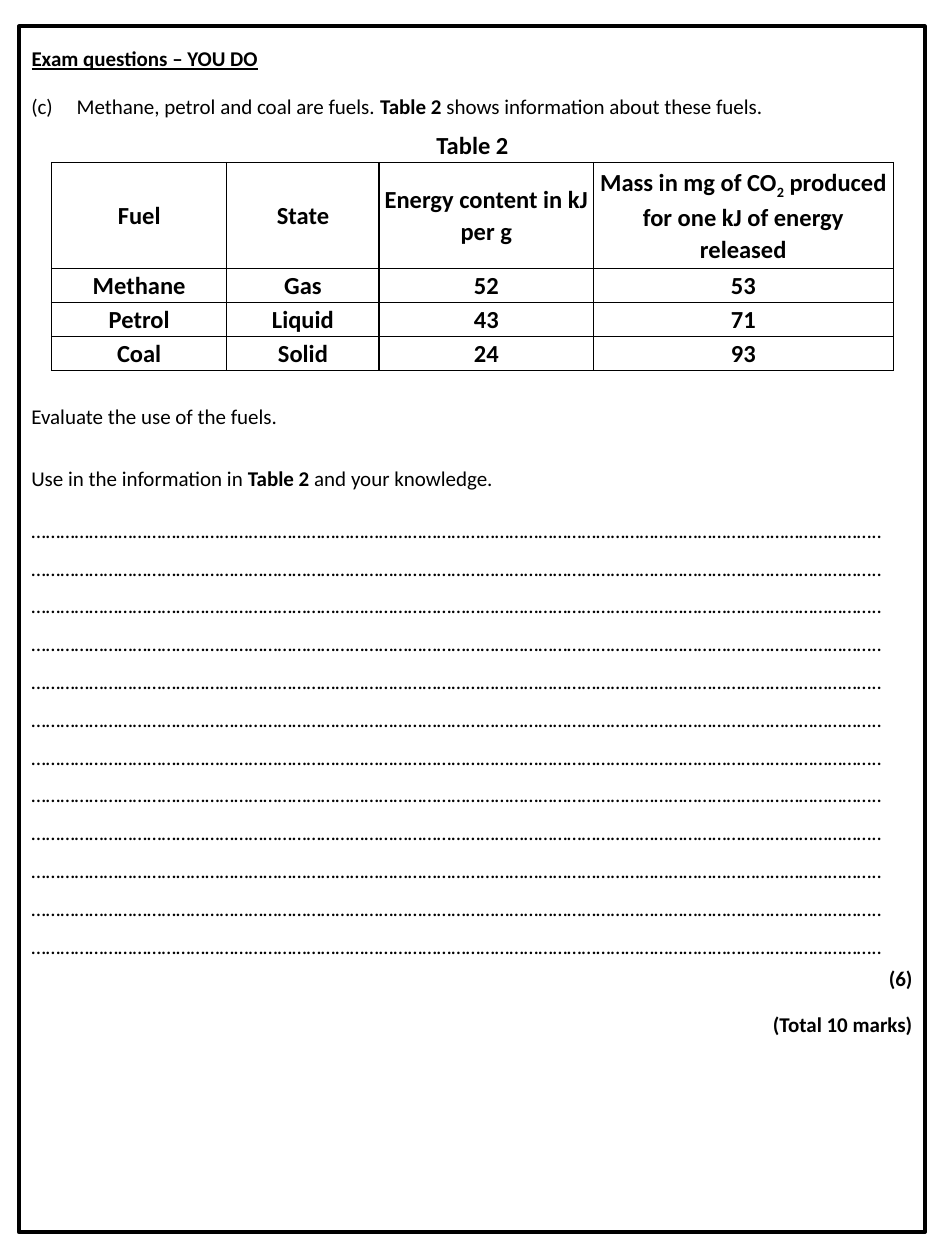
import pptx
import pptx.dml.color
import pptx.enum.shapes
import pptx.enum.text
import pptx.oxml
import pptx.oxml.ns
import pptx.util
from dataclasses import dataclass

Inches = pptx.util.Inches
Pt = pptx.util.Pt
Align = pptx.enum.text.PP_ALIGN
Anchor = pptx.enum.text.MSO_ANCHOR

BLACK = "000000"
FRAME = (0.15, 0.21, 7.19, 9.57)
TABLE = (0.41, 1.02, 6.68, 1.92)
COLUMN_WIDTHS = (1.39, 1.21, 1.7, 2.38)
ROW_HEIGHTS = (0.27, 0.84, 0.27, 0.27, 0.27)
ANSWER_LINES = 12
ANSWER_LINE = "…" * 58 + ".."


@dataclass(frozen=True)
class Span:
    text: str
    bold: bool = False
    subscript: bool = False


@dataclass(frozen=True)
class Line:
    spans: tuple[Span, ...]
    spacing: float = 1.07
    before: float = 12
    after: float = 8
    align: Align = Align.LEFT
    hanging: float = 0


QUESTION = (
    Line(
        (
            Span("(c)\tMethane, petrol and coal are fuels. "),
            Span("Table 2", bold=True),
            Span(" shows information about these fuels."),
        ),
        before=0,
        hanging=0.36,
    ),
    Line((Span("Evaluate the use of the fuels."),), before=153.7),
    Line(
        (
            Span("Use in the information in "),
            Span("Table 2", bold=True),
            Span(" and your knowledge."),
        )
    ),
    *[Line((Span(ANSWER_LINE),), spacing=1.5, before=0, after=0)] * ANSWER_LINES,
    *[
        Line((Span(marks, bold=True),), before=3, align=Align.RIGHT)
        for marks in ("(6)", "(Total 10 marks)")
    ],
)

CO2_HEADING = (
    Span("Mass in mg of CO", bold=True),
    Span("2", bold=True, subscript=True),
    Span(" produced for one kJ of energy released", bold=True),
)
TABLE_ROWS = (
    ("Table 2", "", "", ""),
    ("Fuel", "State", "Energy content in kJ per g", CO2_HEADING),
    ("Methane", "Gas", "52", "53"),
    ("Petrol", "Liquid", "43", "71"),
    ("Coal", "Solid", "24", "93"),
)


def color(value: str) -> pptx.dml.color.RGBColor:
    return pptx.dml.color.RGBColor.from_string(value)


def add_text(para, text: str, *, size: float = 12, bold: bool = False,
             underline: bool = False, subscript: bool = False) -> None:
    span = para.add_run()
    span.text = text
    span.font.name = "Calibri"
    span.font.size = Pt(size)
    span.font.bold = bold
    span.font.underline = underline
    span.font.color.rgb = color(BLACK)
    if subscript:
        span.font._element.set("baseline", "-25000")


def write_line(para, line: Line, size: float = 12) -> None:
    para.alignment = line.align
    para.line_spacing = line.spacing
    para.space_before = Pt(line.before)
    para.space_after = Pt(line.after)
    if line.hanging:
        properties = para._p.get_or_add_pPr()
        properties.set("marL", str(Inches(line.hanging)))
        properties.set("indent", str(-Inches(line.hanging)))
    for span in line.spans:
        add_text(para, span.text, size=size, bold=span.bold, subscript=span.subscript)


def set_borders(cell, visible: str) -> None:
    properties = cell._tc.get_or_add_tcPr()
    namespace = pptx.oxml.ns.nsdecls("a")
    for position, side in enumerate("LRTB"):
        fill = (
            f'<a:solidFill><a:srgbClr val="{BLACK}"/></a:solidFill>'
            if side in visible else "<a:noFill/>"
        )
        border = pptx.oxml.parse_xml(
            f'<a:ln{side} {namespace} w="{Pt(1)}">{fill}</a:ln{side}>'
        )
        properties.insert(position, border)


def add_heading(page) -> None:
    heading = page.shapes.title
    left, top, width, _ = FRAME
    heading.left, heading.top, heading.width, heading.height = map(
        Inches, (left, top, width, 0.4)
    )
    frame = heading.text_frame
    frame.word_wrap = True
    frame.auto_size = pptx.enum.text.MSO_AUTO_SIZE.NONE
    frame.vertical_anchor = Anchor.TOP
    para = frame.paragraphs[0]
    para.alignment = Align.LEFT
    para.line_spacing = 1.5
    add_text(para, "Exam questions – YOU DO", bold=True, underline=True)


def add_question(page) -> None:
    box = page.shapes.add_shape(
        pptx.enum.shapes.MSO_SHAPE.RECTANGLE, *map(Inches, FRAME)
    )
    box.shadow.inherit = False
    box.fill.background()
    box.line.color.rgb = color(BLACK)
    box.line.width = Pt(2.25)
    frame = box.text_frame
    frame.word_wrap = True
    frame.vertical_anchor = Anchor.TOP
    frame.margin_top = Inches(0.52)
    for index, line in enumerate(QUESTION):
        para = frame.add_paragraph() if index else frame.paragraphs[0]
        write_line(para, line)


def add_fuel_table(page) -> None:
    table = page.shapes.add_table(
        len(ROW_HEIGHTS), len(COLUMN_WIDTHS), *map(Inches, TABLE)
    ).table
    table.first_row = table.horz_banding = False
    for column, width in zip(table.columns, COLUMN_WIDTHS):
        column.width = Inches(width)
    for row, height in zip(table.rows, ROW_HEIGHTS):
        row.height = Inches(height)
    table.cell(0, 0).merge(table.cell(0, len(COLUMN_WIDTHS) - 1))
    for row_index, contents in enumerate(TABLE_ROWS):
        for column_index, content in enumerate(contents):
            cell = table.cell(row_index, column_index)
            cell.fill.background()
            set_borders(cell, "LRTB" if row_index else "B")
            if not content:
                continue
            cell.vertical_anchor = Anchor.MIDDLE
            cell.margin_left = cell.margin_right = Inches(0.01)
            cell.margin_top = cell.margin_bottom = 0
            spans = (Span(content, bold=True),) if isinstance(content, str) else content
            para = cell.text_frame.paragraphs[0]
            write_line(para, Line(spans, before=4.5, after=4.5, align=Align.CENTER), 14)
            for side in ("marL", "marR"):
                para._p.get_or_add_pPr().set(side, str(Inches(0.03)))


def main() -> None:
    deck = pptx.Presentation()
    deck.slide_width = Inches(7.5)
    deck.slide_height = Inches(10)
    page = deck.slides.add_slide(deck.slide_layouts.get_by_name("Title Only"))
    add_heading(page)
    add_question(page)
    add_fuel_table(page)
    deck.save("out.pptx")


if __name__ == "__main__":
    main()
